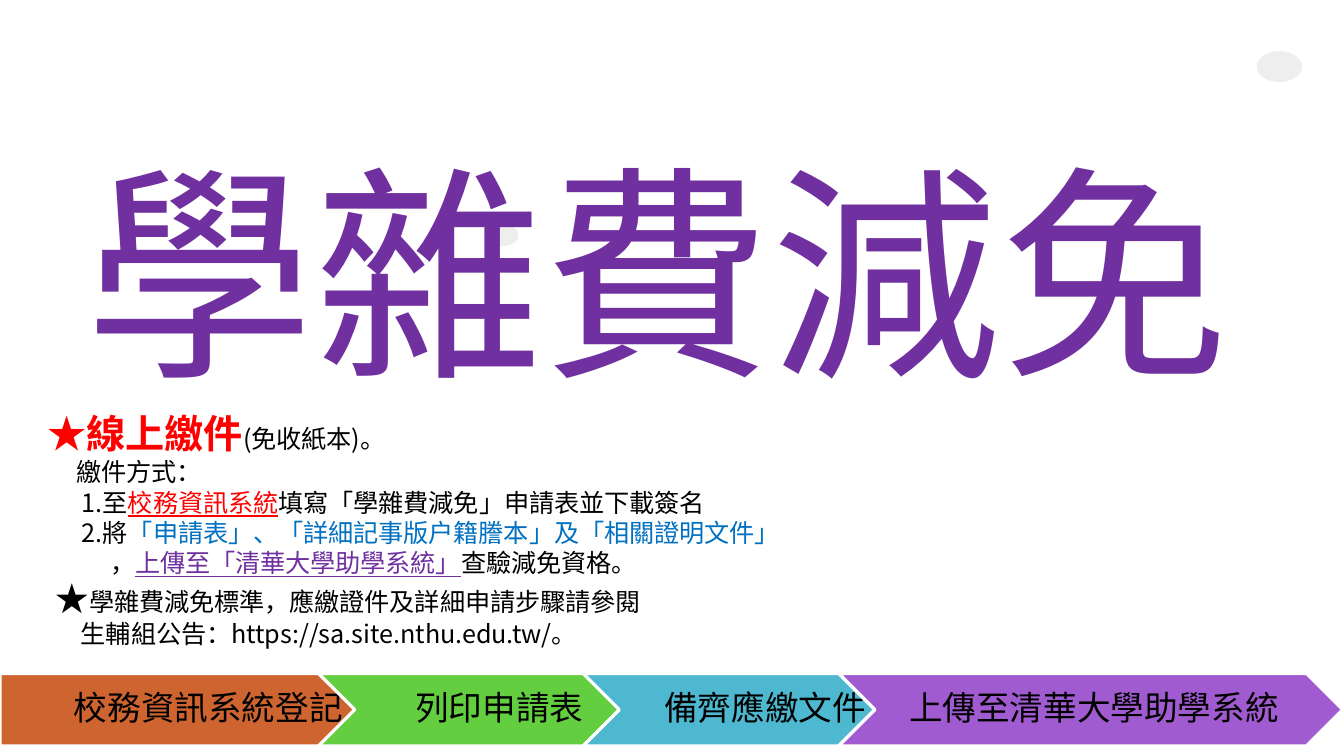
from lxml.etree import SubElement
from pptx import Presentation
from pptx.dml.color import RGBColor
from pptx.enum.shapes import MSO_SHAPE as Shape
from pptx.enum.text import MSO_ANCHOR as Anchor, PP_ALIGN as Align
from pptx.oxml.ns import qn
from pptx.util import Cm, Pt

CJK = "Noto Sans CJK TC"
BLACK, RED, BLUE, PURPLE = "000000", "FF0000", "0070C0", "7030A0"

# Left, width, preset, fill and label of each step (cm)
STEPS = [
    (0, 8.1, Shape.PENTAGON, "CE6430", "校務資訊系統登記"),
    (6.02, 6.71, Shape.CHEVRON, "63CE3F", "列印申請表"),
    (11.02, 6.76, Shape.CHEVRON, "4DB8CF", "備齊應繳文件"),
    (15.85, 9.53, Shape.CHEVRON, "A15BD0", "上傳至清華大學助學系統"),
]

# Left indent (cm) and spans: text, colour, then size, bold, underline if special
DETAILS = [
    (0, [("★線上繳件", RED, {"size": Pt(21), "bold": True}), ("(免收紙本)。", BLACK)]),
    (0.55, [("繳件方式：", BLACK)]),
    (0.66, [("1.至", BLACK), ("校務資訊系統", RED, {"underline": True}),
            ("填寫「學雜費減免」申請表並下載簽名", BLACK)]),
    (0.66, [("2.將", BLACK),
            ("「申請表」、「詳細記事版戶籍謄本」及「相關證明文件」", BLUE)]),
    (1.19, [("，", BLACK), ("上傳至「清華大學助學系統」", PURPLE, {"underline": True}),
            ("查驗減免資格。", BLACK)]),
    (0.16, [("★", BLACK, {"size": Pt(18), "bold": True}),
            ("學雜費減免標準，應繳證件及詳細申請步驟請參閱", BLACK)]),
    (0.64, [("生輔組公告：https://sa.site.nthu.edu.tw/。", BLACK)]),
]


def color(hex_code):
    return RGBColor.from_string(hex_code)


def set_font(para, size, name=CJK, hex_code=BLACK):
    """Give a paragraph its font, with a CJK face for East Asian text."""
    font = para.font
    font.size, font.name = Pt(size), name
    font.color.rgb = color(hex_code)
    properties = para._p.pPr.find(qn("a:defRPr"))
    SubElement(properties, qn("a:ea")).set("typeface", CJK)


def add_span(para, text, hex_code, style=None):
    span = para.add_run()
    span.text = text
    span.font.color.rgb = color(hex_code)
    for key, value in (style or {}).items():
        setattr(span.font, key, value)


def add_filled(page, preset, left, top, width, height, fill):
    shape = page.shapes.add_shape(preset, Cm(left), Cm(top), Cm(width), Cm(height))
    shape.shadow.inherit = False
    shape.fill.solid()
    shape.fill.fore_color.rgb = color(fill)
    shape.line.fill.background()
    return shape


def add_step(page, left, width, preset, fill, label):
    step = add_filled(page, preset, left, 12.73, width, 1.37, fill)
    step.line.color.rgb = color("FFFFFF")
    step.line.width = Pt(1.75)
    frame = step.text_frame
    frame.word_wrap = False
    frame.vertical_anchor = Anchor.MIDDLE
    frame.margin_left, frame.margin_right = Cm(0.2), Cm(0.08)
    para = frame.paragraphs[0]
    para.text = label
    para.alignment = Align.CENTER
    para.line_spacing = 0.9
    set_font(para, 18)


def add_text_box(page, left, top, width, height):
    box = page.shapes.add_textbox(Cm(left), Cm(top), Cm(width), Cm(height))
    box.text_frame.word_wrap = True
    return box.text_frame


def add_title(page):
    para = add_text_box(page, -0.28, 2.36, 25.4, 4.19).paragraphs[0]
    para.text = "學雜費減免"
    para.alignment = Align.CENTER
    set_font(para, 122.5, "Arial", PURPLE)


def add_details(page):
    frame = add_text_box(page, 0.64, 7.62, 14.6, 4.8)
    for index, (indent, spans) in enumerate(DETAILS):
        para = frame.add_paragraph() if index else frame.paragraphs[0]
        para.alignment = Align.LEFT
        para._p.get_or_add_pPr().set("marL", str(Cm(indent)))
        set_font(para, 13.5)
        for span in spans:
            add_span(para, *span)


def main():
    deck = Presentation()
    deck.slide_width, deck.slide_height = Cm(25.4), Cm(14.29)
    page = deck.slides.add_slide(deck.slide_layouts[6])
    for step in STEPS:
        add_step(page, *step)
    add_filled(page, Shape.OVAL, 23.75, 0.97, 0.86, 0.58, "EEEEEE")
    add_filled(page, Shape.OVAL, 9.22, 4.24, 0.58, 0.41, "EEEEEE")
    add_title(page)
    add_details(page)
    deck.save("out.pptx")


if __name__ == "__main__":
    main()
